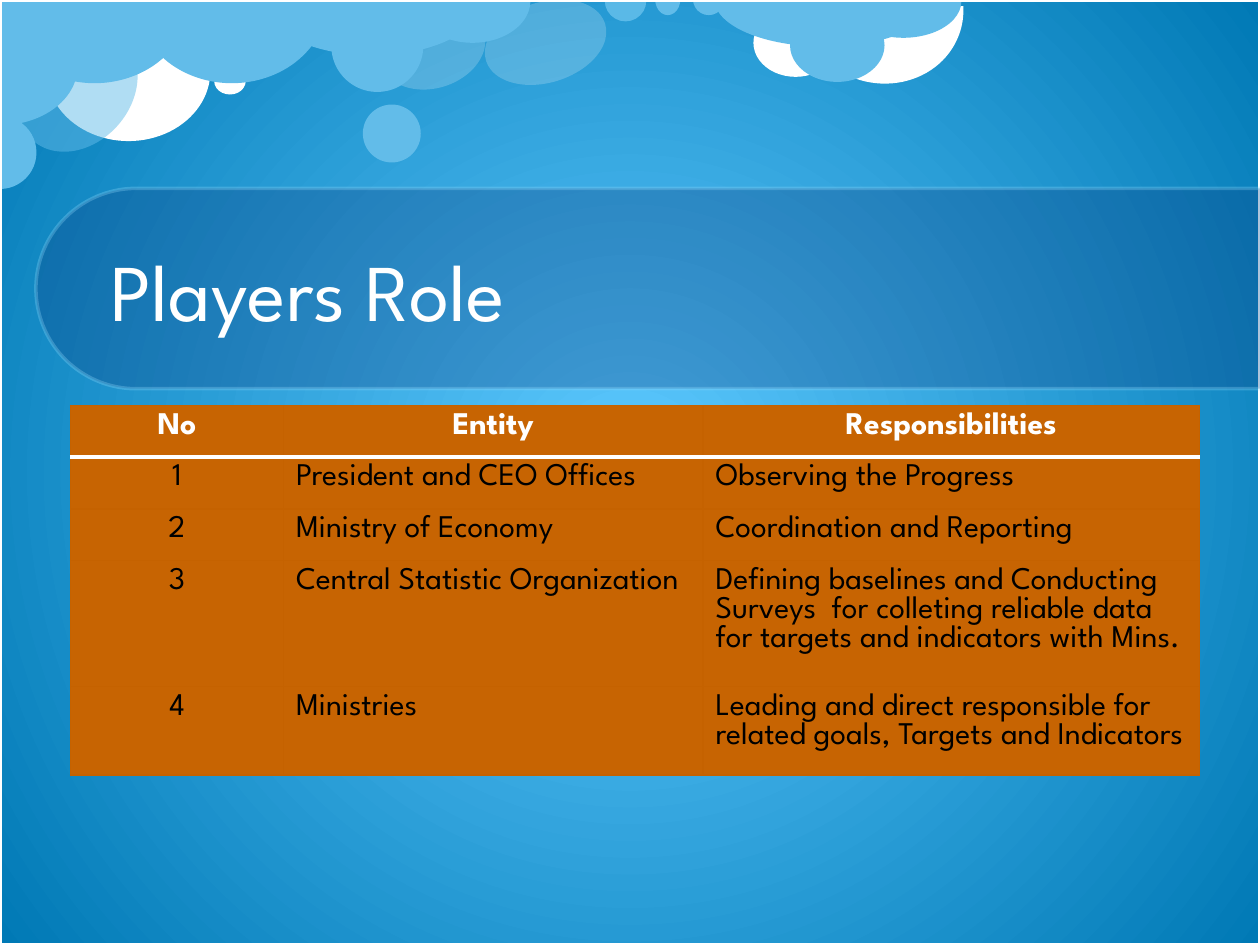
from lxml import etree
from pptx import Presentation
from pptx.dml.color import RGBColor
from pptx.enum.shapes import MSO_SHAPE
from pptx.enum.text import MSO_ANCHOR, PP_ALIGN
from pptx.oxml.ns import qn
from pptx.util import Inches, Pt

OVAL, PIE, ARC = MSO_SHAPE.OVAL, MSO_SHAPE.PIE, MSO_SHAPE.ARC
RECT, TAB = MSO_SHAPE.RECTANGLE, MSO_SHAPE.ROUND_2_SAME_RECTANGLE
CENTER, LEFT = PP_ALIGN.CENTER, PP_ALIGN.LEFT
MIDDLE = MSO_ANCHOR.MIDDLE
WHITE = RGBColor(0xFF, 0xFF, 0xFF)
BLACK = RGBColor(0, 0, 0)
SKY = RGBColor(0x62, 0xBC, 0xE9)
PALE = RGBColor(0x8F, 0xD9, 0xFB)
NAVY = RGBColor(0x07, 0x37, 0x79)
GLOW = RGBColor(0x5D, 0xC9, 0xFF)
DEEP = RGBColor(0x00, 0x79, 0xB5)
ORANGE = RGBColor(0xC7, 0x64, 0x02)
RUST = RGBColor(0xC5, 0x62, 0x00)
FONT = "League Spartan"

TITLE = "Players Role"
ROWS = [
    ("No", "Entity", "Responsibilities"),
    ("1", "President and CEO Offices", "Observing the Progress"),
    ("2", "Ministry of Economy", "Coordination and Reporting"),
    ("3", "Central Statistic Organization",
     "Defining baselines and Conducting Surveys  for colleting reliable data "
     "for targets and indicators with Mins."),
    ("4", "Ministries",
     "Leading and direct responsible for related goals, Targets and Indicators"),
]
WIDTHS = (1.69, 3.33, 3.94)
HEIGHTS = (0.41, 0.41, 0.41, 0.79, 0.57)

HALF = (0, 108)
CLOUDS = [
    (OVAL, (3.11, -0.05, 0.64, 0.86), WHITE, 20, 72.8, ()),
    (OVAL, (0.37, 0.01, 1.3, 1.11), WHITE, 100, 0, ()),
    (ARC, (6.39, -0.6, 1.21, 1.31), WHITE, 100, 106.5, (151.8, 44.48)),
    (OVAL, (5.98, 0.07, 0.67, 0.54), WHITE, 100, 0, ()),
    (PIE, (-0.01, -0.66, 1.52, 1.32), SKY, 100, 0, HALF),
    (PIE, (2.08, -0.44, 1.75, 0.88), SKY, 100, 0, HALF),
    (OVAL, (2.88, 0.83, 0.46, 0.46), SKY, 100, 0, ()),
    (OVAL, (0.19, 0.18, 0.85, 1.07), SKY, 50, 41.8, ()),
    (PIE, (-0.29, 0.92, 0.58, 0.58), SKY, 100, 270, HALF),
    (OVAL, (1.7, 0.54, 0.25, 0.21), WHITE, 100, 0, ()),
    (PIE, (1.08, -0.66, 1.52, 1.32), SKY, 100, 0, HALF),
    (PIE, (5.67, -0.38, 1.75, 0.75), SKY, 100, 0, HALF),
    (OVAL, (6.27, 0.07, 0.75, 0.58), SKY, 100, 0, ()),
    (PIE, (6.71, -0.28, 0.92, 0.58), SKY, 100, 0, HALF),
    (OVAL, (4.01, -0.16, 0.64, 0.99), WHITE, 20, 72.8, ()),
    (PIE, (4.8, -0.16, 0.33, 0.33), PALE, 50, 0, HALF),
    (PIE, (5.2, -0.13, 0.2, 0.25), SKY, 100, 0, HALF),
    (PIE, (5.5, -0.13, 0.25, 0.25), SKY, 100, 0, HALF),
    (OVAL, (2.63, 0, 0.73, 0.73), SKY, 100, 0, ()),
    (PIE, (3.29, -0.33, 0.92, 0.67), SKY, 100, 0, HALF),
    (PIE, (-0.47, -0.09, 0.93, 1.24), SKY, 100, 270, HALF),
]


def add_node(parent, tag, **attrs):
    return etree.SubElement(parent, qn(tag), {k: str(v) for k, v in attrs.items()})


def fade(props, alpha):
    if alpha < 100:
        color = props.find(qn("a:solidFill"))[0]
        add_node(color, "a:alpha", val=alpha * 1000)


def draw(slide, kind, box, color=None, alpha=100, turn=0, adjust=(), edge=None):
    shape = slide.shapes.add_shape(kind, *map(Inches, box))
    shape.shadow.inherit = False
    shape.rotation = turn
    for i, value in enumerate(adjust):
        shape.adjustments[i] = value
    if color is None:
        shape.fill.background()
    else:
        shape.fill.solid()
        shape.fill.fore_color.rgb = color
        fade(shape.fill._xPr, alpha)
    if edge is None:
        shape.line.fill.background()
    else:
        shape.line.color.rgb = edge[0]
        shape.line.width = Pt(2)
        fade(shape.line._ln, edge[1])


def set_font(para, size, color, bold=False):
    font = para.font
    font.name, font.size, font.bold = FONT, Pt(size), bold
    font.color.rgb = color


def paint_back(slide):
    fill = slide.background.fill
    fill.gradient()
    for stop, color, place in zip(fill.gradient_stops, (GLOW, DEEP), (0, 1)):
        stop.color.rgb = color
        stop.position = place
    grad = slide.background._cSld.find(".//" + qn("a:gradFill"))
    line = grad.find(qn("a:lin"))
    ring = etree.Element(qn("a:path"), {"path": "circle"})
    add_node(ring, "a:fillToRect", l=50000, t=50000, r=50000, b=50000)
    grad.replace(line, ring)


def add_edges(cell, head, below):
    props = cell._tc.get_or_add_tcPr()
    white = {"a:lnB": head, "a:lnT": below}
    for i, tag in enumerate(("a:lnL", "a:lnR", "a:lnT", "a:lnB")):
        thick = white.get(tag, False)
        edge = etree.Element(qn(tag), {"w": str(Pt(2.5 if thick else 1))})
        fill = add_node(edge, "a:solidFill")
        add_node(fill, "a:srgbClr", val=WHITE if thick else RUST)
        props.insert(i, edge)


def add_roles(slide):
    frame = slide.shapes.add_table(
        len(ROWS), len(WIDTHS), Inches(0.56), Inches(3.22),
        Inches(sum(WIDTHS)), Inches(sum(HEIGHTS)))
    table = frame.table
    table.horz_banding = False
    for col, width in zip(table.columns, WIDTHS):
        col.width = Inches(width)
    for r, texts in enumerate(ROWS):
        table.rows[r].height = Inches(HEIGHTS[r])
        head = r == 0
        for c, text in enumerate(texts):
            cell = table.cell(r, c)
            cell.text = text
            cell.fill.solid()
            cell.fill.fore_color.rgb = ORANGE
            add_edges(cell, head, r == 1)
            para = cell.text_frame.paragraphs[0]
            para.alignment = CENTER if head or c == 0 else LEFT
            set_font(para, 18, WHITE if head else BLACK, head)


def main():
    deck = Presentation()
    deck.slide_width, deck.slide_height = Inches(10), Inches(7.5)
    slide = deck.slides.add_slide(deck.slide_layouts[6])
    paint_back(slide)
    for cloud in CLOUDS:
        draw(slide, *cloud)
    draw(slide, RECT, (0, 0, 10, 7.5), edge=(WHITE, 100))
    draw(slide, TAB, (4.35, -2.57, 1.59, 9.72), NAVY, 30, 270, (0.5, 0), (PALE, 30))
    box = slide.shapes.add_textbox(*map(Inches, (0.78, 1.5, 8.44, 1.58)))
    frame = box.text_frame
    frame.word_wrap = True
    frame.vertical_anchor = MIDDLE
    para = frame.paragraphs[0]
    para.text = TITLE
    para.line_spacing = Pt(56)
    set_font(para, 46, WHITE)
    add_roles(slide)
    deck.save("out.pptx")


if __name__ == "__main__":
    main()
